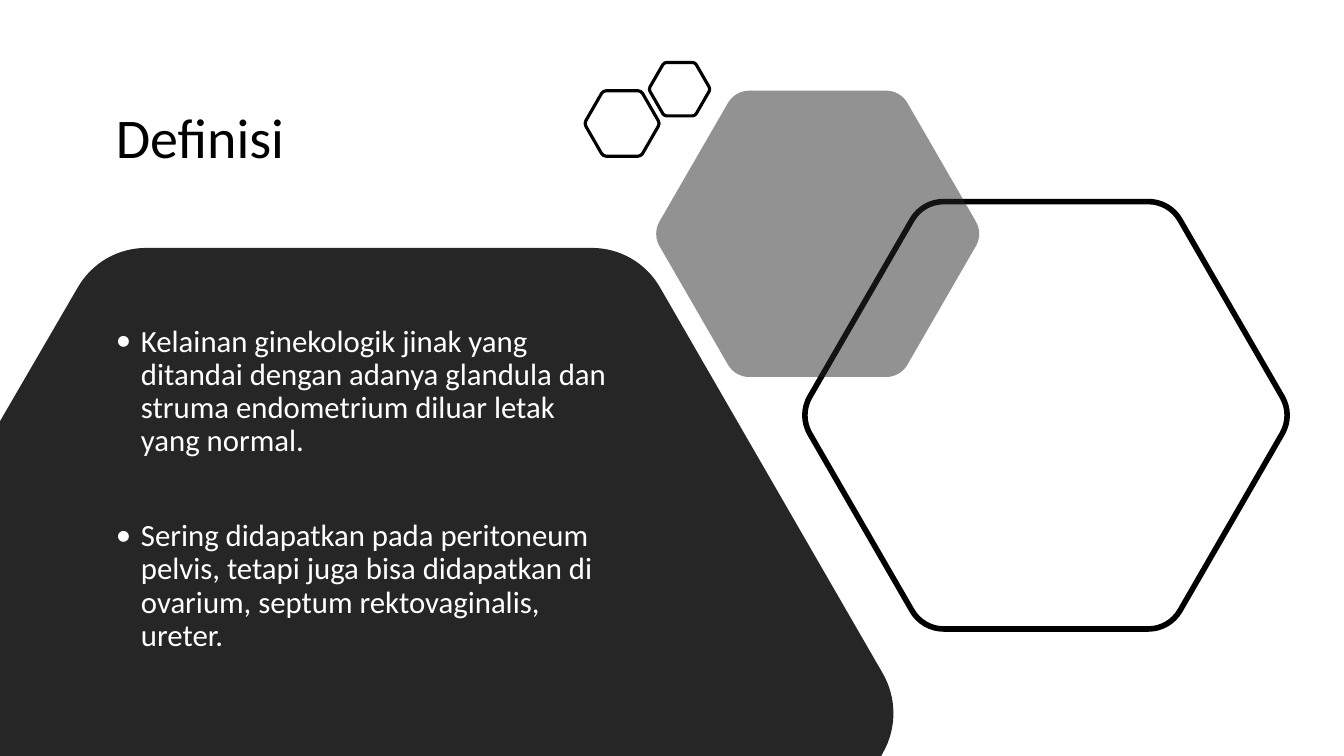
from math import dist, sqrt

from lxml.etree import SubElement
from pptx import Presentation
from pptx.dml.color import RGBColor
from pptx.enum.text import MSO_ANCHOR
from pptx.oxml.ns import qn
from pptx.util import Inches, Pt

SLIDE_WIDTH, SLIDE_HEIGHT = 13.33, 7.5
BLACK, CHARCOAL, WHITE = "000000", "262626", "FFFFFF"
CORNER_CUT = 0.086
CURVE_PULL = 0.62
DEFINITIONS = [
    "Kelainan ginekologik jinak yang ditandai dengan adanya glandula dan "
    "struma endometrium diluar letak yang normal.",
    "Sering didapatkan pada peritoneum pelvis, tetapi juga bisa didapatkan di "
    "ovarium, septum rektovaginalis, ureter.",
]


def color(value):
    return RGBColor.from_string(value)


def toward(start, end, length):
    ratio = length / dist(start, end)
    return tuple(a + ratio * (b - a) for a, b in zip(start, end))


def corner_points(previous, vertex, following, cut):
    pulled = cut * (1 - CURVE_PULL)
    return [
        toward(vertex, previous, cut),
        toward(vertex, previous, pulled),
        toward(vertex, following, pulled),
        toward(vertex, following, cut),
    ]


def add_rounded_outline(slide, rounded, sharp, cut):
    vertices = rounded + sharp
    points = []
    for index, vertex in enumerate(rounded):
        following = vertices[(index + 1) % len(vertices)]
        points += corner_points(vertices[index - 1], vertex, following, cut)
    points = [(Inches(x), Inches(y)) for x, y in points + sharp]
    builder = slide.shapes.build_freeform(*points[0])
    builder.add_line_segments(points[1:], close=True)
    shape = builder.convert_to_shape()
    shape.shadow.inherit = False
    outline = shape._element.find(".//" + qn("a:path"))
    segments = outline.findall(qn("a:lnTo"))
    for index in range(len(rounded)):
        corner = segments[4 * index:4 * index + 3]
        curve = outline.makeelement(qn("a:cubicBezTo"), {})
        corner[0].addprevious(curve)
        for segment in corner:
            curve.append(segment[0])
            outline.remove(segment)
    return shape


def add_hexagon(slide, left, top, width, height):
    side = height / sqrt(3)
    center, middle = left + width / 2, top + height / 2
    vertices = [
        (center - side / 2, top), (center + side / 2, top),
        (center + side, middle), (center + side / 2, top + height),
        (center - side / 2, top + height), (center - side, middle),
    ]
    return add_rounded_outline(slide, vertices, [], side * CORNER_CUT)


def style_fill(shape, fill, alpha=None):
    shape.fill.solid()
    shape.fill.fore_color.rgb = color(fill)
    shape.line.fill.background()
    if alpha:
        fill_color = shape._element.spPr.find(".//" + qn("a:srgbClr"))
        SubElement(fill_color, qn("a:alpha"), val=str(alpha * 1000))


def style_outline(shape, width):
    shape.fill.background()
    shape.line.color.rgb = color(BLACK)
    shape.line.width = Pt(width)


def add_panel(slide):
    rounded = [(1, 2.46), (6.32, 2.46), (8.98, 7.07)]
    sharp = [(8.74, SLIDE_HEIGHT), (0, SLIDE_HEIGHT), (0, 4.18)]
    style_fill(add_rounded_outline(slide, rounded, sharp, 0.45), CHARCOAL)


def add_hexagons(slide):
    style_outline(add_hexagon(slide, 7.96, 2, 4.83, 4.24), 4)
    style_fill(add_hexagon(slide, 6.51, 0.9, 3.2, 2.84), CHARCOAL, 50)
    style_outline(add_hexagon(slide, 5.8, 0.9, 0.74, 0.65), 2.25)
    style_outline(add_hexagon(slide, 6.44, 0.62, 0.6, 0.53), 2.25)


def add_text(slide, box, texts, size, font_color, anchor):
    frame = slide.shapes.add_textbox(*map(Inches, box)).text_frame
    frame.word_wrap = True
    frame.vertical_anchor = anchor
    frame.text = "\n".join(texts)
    for paragraph in frame.paragraphs:
        paragraph.line_spacing = 0.9
        paragraph.font.name = "Calibri"
        paragraph.font.size = Pt(size)
        paragraph.font.color.rgb = color(font_color)
    return frame


def add_title(slide, box):
    add_text(slide, box, ["Definisi"], 40, BLACK, MSO_ANCHOR.MIDDLE)


def add_definitions(slide, box):
    frame = add_text(slide, box, DEFINITIONS, 22, WHITE, MSO_ANCHOR.TOP)
    for index, paragraph in enumerate(frame.paragraphs):
        paragraph.space_before = Pt(44 if index else 10)
        properties = paragraph._p.get_or_add_pPr()
        properties.set("marL", str(Inches(0.25)))
        properties.set("indent", str(Inches(-0.25)))
        defaults = properties.find(qn("a:defRPr"))
        for tag, attributes in (("a:buFont", {"typeface": "Calibri"}), ("a:buChar", {"char": "•"})):
            defaults.addprevious(properties.makeelement(qn(tag), attributes))


def main():
    presentation = Presentation()
    presentation.slide_width = Inches(SLIDE_WIDTH)
    presentation.slide_height = Inches(SLIDE_HEIGHT)
    slide = presentation.slides.add_slide(presentation.slide_layouts[6])
    add_panel(slide)
    add_hexagons(slide)
    add_title(slide, (1.05, 0.49, 4.68, 1.8))
    add_definitions(slide, (1.05, 3.18, 5.19, 3.38))
    presentation.save("out.pptx")


if __name__ == "__main__":
    main()
